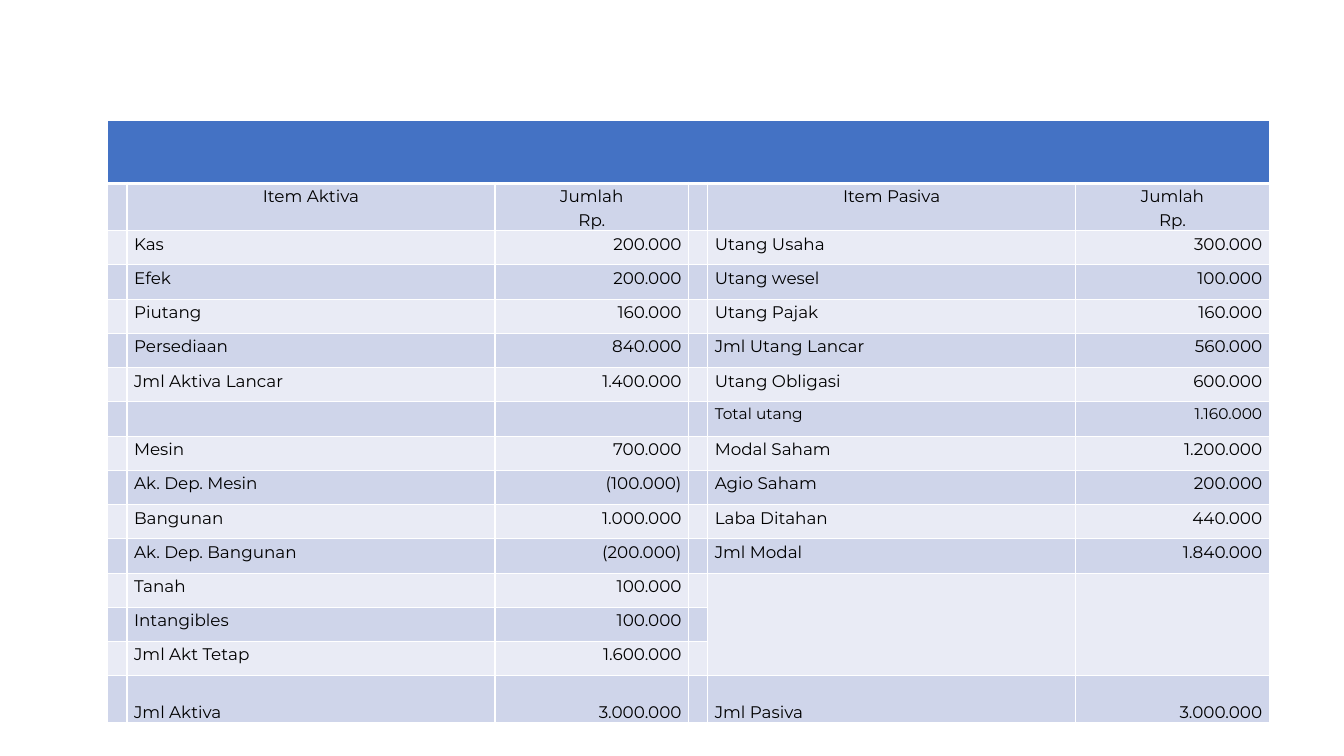
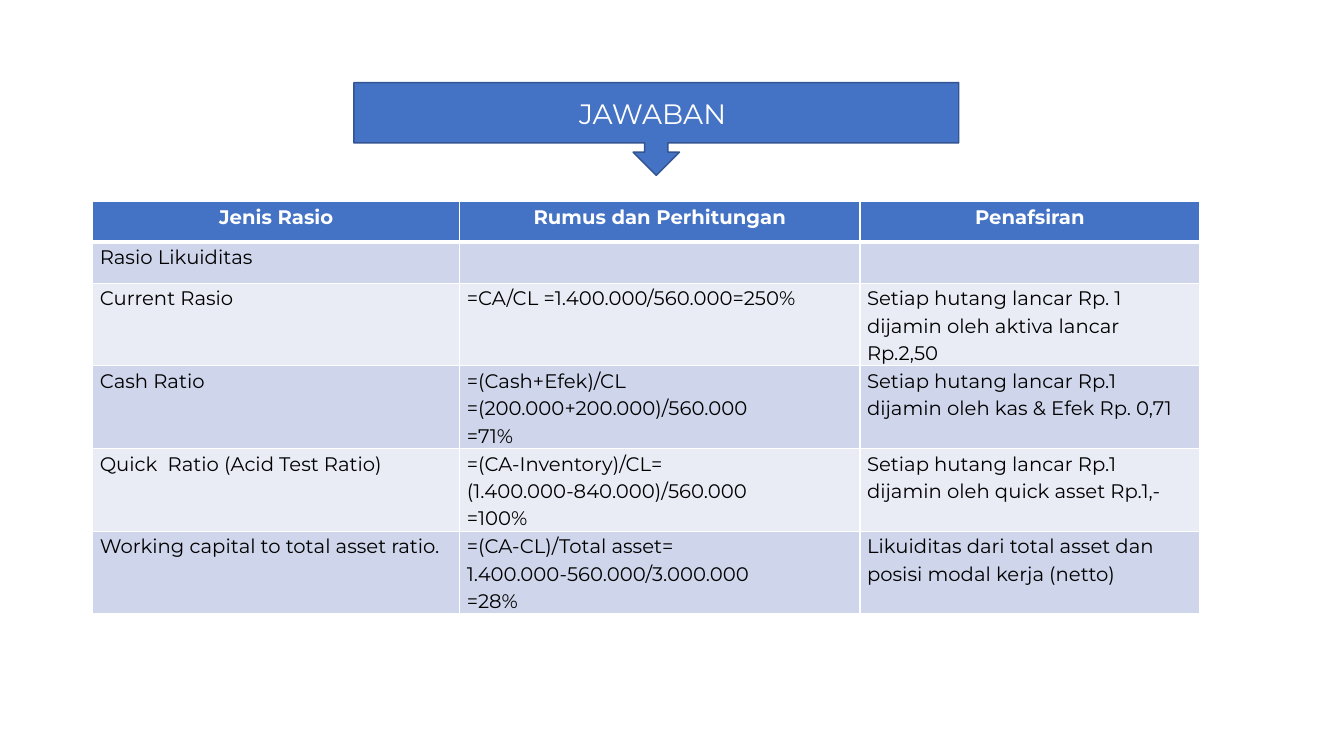
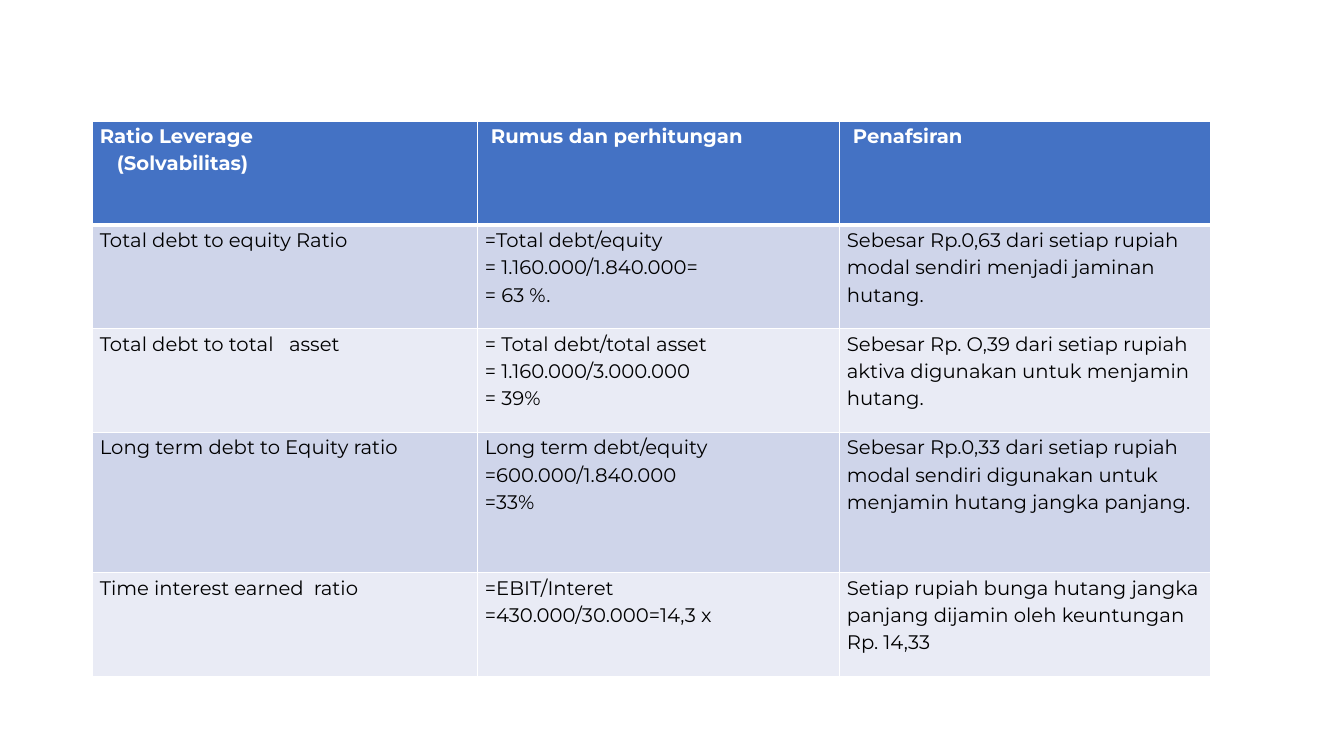
import dataclasses

import pptx
import pptx.dml.color
import pptx.enum.shapes
import pptx.enum.text
import pptx.oxml.ns
import pptx.util
from lxml import etree

Inches = pptx.util.Inches
Pt = pptx.util.Pt
qn = pptx.oxml.ns.qn
Align = pptx.enum.text.PP_ALIGN
Anchor = pptx.enum.text.MSO_ANCHOR

# Shared look
FONT = "Montserrat"
BLUE, EDGE, WHITE, BLACK = "4472C4", "325491", "FFFFFF", "000000"
BANDS = ("E9EBF5", "CFD5EA")
ALIGN = {"l": Align.LEFT, "c": Align.CENTER, "r": Align.RIGHT}
PAD = {
    "margin_left": Inches(0.07),
    "margin_right": Inches(0.07),
    "margin_top": 0,
    "margin_bottom": 0,
}
PLAIN = {"first_row": False, "horz_banding": False}


@dataclasses.dataclass
class Grid:
    """A table: place, sizes, text rows, and what departs from the rule."""

    left: float
    top: float
    cols: list[float]
    rows: list[float]
    text: list[tuple[str, ...]]
    size: float
    heads: dict[int, str]  # alignment of all cells in a row
    sides: str  # alignment of each column, one letter each
    sizes: dict[int, float] = dataclasses.field(default_factory=dict)
    dents: dict[tuple[int, int, int], float] = dataclasses.field(default_factory=dict)
    spans: list[tuple[int, int, int, int]] = dataclasses.field(default_factory=list)
    low: int = -1  # row whose text sits at the bottom


# Helpers
def put(item, form: dict) -> None:
    for key, value in form.items():
        setattr(item, key, value)


def tint(code: str) -> pptx.dml.color.RGBColor:
    return pptx.dml.color.RGBColor.from_string(code)


def paint(item, code: str) -> None:
    item.fill.solid()
    item.fill.fore_color.rgb = tint(code)


def style(run, size: float, code: str, bold: bool = False) -> None:
    put(run.font, {"name": FONT, "size": Pt(size), "bold": bold})
    run.font.color.rgb = tint(code)


def frame(cell, row: int) -> None:
    """White cell borders, with a thick rule under the top row."""
    props = cell._tc.get_or_add_tcPr()
    thick = {0: "lnB", 1: "lnT"}.get(row)
    for tag in ("lnL", "lnR", "lnT", "lnB"):
        width = Pt(3 if tag == thick else 1)
        line = etree.SubElement(props, qn("a:" + tag), w=str(int(width)))
        fill = etree.SubElement(line, qn("a:solidFill"))
        etree.SubElement(fill, qn("a:srgbClr"), val=WHITE)


def write(cell, grid: Grid, row: int, col: int) -> None:
    size = grid.sizes.get(row, grid.size)
    side = grid.heads.get(row, grid.sides)
    for num, line in enumerate(grid.text[row][col].split("\n")):
        body = cell.text_frame
        para = body.add_paragraph() if num else body.paragraphs[0]
        put(para, {"alignment": ALIGN[side[col]], "line_spacing": 1.15})
        dent = grid.dents.get((row, col, num))
        if dent:
            para._p.get_or_add_pPr().set("marL", str(int(Inches(dent))))
        if line:
            run = para.add_run()
            run.text = line
            style(run, size, BLACK if row else WHITE, row == 0)
        else:
            etree.SubElement(para._p, qn("a:endParaRPr"), sz=str(int(size * 100)))


def draw(slide, grid: Grid) -> None:
    table = slide.shapes.add_table(
        len(grid.rows), len(grid.cols), Inches(grid.left), Inches(grid.top),
        Inches(sum(grid.cols)), Inches(sum(grid.rows)),
    ).table
    put(table, PLAIN)
    for part, width in zip(table.columns, grid.cols):
        part.width = Inches(width)
    for part, height in zip(table.rows, grid.rows):
        part.height = Inches(height)
    for row in range(len(grid.rows)):
        for col in range(len(grid.cols)):
            cell = table.cell(row, col)
            put(cell, PAD)
            if row == grid.low:
                cell.vertical_anchor = Anchor.BOTTOM
            frame(cell, row)
            paint(cell, BANDS[row % 2] if row else BLUE)
            write(cell, grid, row, col)
    for top, left, end, right in grid.spans:
        table.cell(top, left).merge(table.cell(end, right))


def banner(slide, text: str) -> None:
    kind = pptx.enum.shapes.MSO_SHAPE.DOWN_ARROW_CALLOUT
    shape = slide.shapes.add_shape(
        kind, Inches(3.51), Inches(0.82), Inches(6), Inches(0.92)
    )
    shape.shadow.inherit = False
    paint(shape, BLUE)
    shape.line.color.rgb = tint(EDGE)
    shape.line.width = Pt(1)
    shape.text_frame.vertical_anchor = Anchor.MIDDLE
    para = shape.text_frame.paragraphs[0]
    para.alignment = Align.CENTER
    run = para.add_run()
    run.text = text
    style(run, 20, WHITE)


# Balance sheet: asset, sum, claim, sum
SHEET = [
    ("", "", "", ""),
    ("Item Aktiva", "Jumlah\nRp.", "Item Pasiva", "Jumlah\nRp."),
    ("Kas", "200.000", "Utang Usaha", "300.000"),
    ("Efek", "200.000", "Utang wesel", "100.000"),
    ("Piutang", "160.000", "Utang Pajak", "160.000"),
    ("Persediaan", "840.000", "Jml Utang Lancar", "560.000"),
    ("Jml Aktiva Lancar", "1.400.000", "Utang Obligasi", "600.000"),
    ("", "", "Total utang", "1.160.000"),
    ("Mesin", "700.000", "Modal Saham", "1.200.000"),
    ("Ak. Dep. Mesin", "(100.000)", "Agio Saham", "200.000"),
    ("Bangunan", "1.000.000", "Laba Ditahan", "440.000"),
    ("Ak. Dep. Bangunan", "(200.000)", "Jml Modal", "1.840.000"),
    ("Tanah", "100.000", "", ""),
    ("Intangibles", "100.000", "", ""),
    ("Jml Akt Tetap", "1.600.000", "", ""),
    ("Jml Aktiva", "3.000.000", "Jml Pasiva", "3.000.000"),
]
BALANCE = Grid(
    left=1.07, top=1.19,
    cols=[0.19, 3.65, 1.92] * 2,
    rows=[0.63, 0.46] + [0.34] * 13 + [0.46],
    text=[("", *line[:2], "", *line[2:]) for line in SHEET],
    size=12, heads={1: "cccccc"}, sides="llrllr", sizes={7: 11},
    spans=[(0, 0, 0, 5), (12, 4, 14, 4), (12, 5, 14, 5)],
    low=15,
)

# Liquidity ratios
LIQUID = Grid(
    left=0.92, top=2,
    cols=[3.64, 3.97, 3.37],
    rows=[0.4, 0.41] + [0.82] * 4,
    text=[
        ("Jenis Rasio", "Rumus dan Perhitungan", "Penafsiran"),
        ("Rasio Likuiditas", "", ""),
        ("Current Rasio", "=CA/CL =1.400.000/560.000=250%",
         "Setiap hutang lancar Rp. 1 dijamin oleh aktiva lancar Rp.2,50"),
        ("Cash Ratio", "=(Cash+Efek)/CL\n=(200.000+200.000)/560.000\n=71%",
         "Setiap hutang lancar Rp.1 dijamin oleh kas & Efek Rp. 0,71"),
        ("Quick  Ratio (Acid Test Ratio)",
         "=(CA-Inventory)/CL=\n(1.400.000-840.000)/560.000\n=100%",
         "Setiap hutang lancar Rp.1 dijamin oleh quick asset Rp.1,-"),
        ("Working capital to total asset ratio.",
         "=(CA-CL)/Total asset=\n1.400.000-560.000/3.000.000\n=28%",
         "Likuiditas dari total asset dan posisi modal kerja (netto)"),
    ],
    size=14, heads={0: "ccc"}, sides="lll",
)

# Leverage ratios
DEBT = Grid(
    left=0.92, top=1.2,
    cols=[3.82, 3.59, 3.68],
    rows=[1.03, 1.03, 1.03, 1.39, 1.03],
    text=[
        ("Ratio Leverage\n(Solvabilitas)", "Rumus dan perhitungan", "Penafsiran"),
        ("Total debt to equity Ratio",
         "=Total debt/equity\n= 1.160.000/1.840.000=\n= 63 %.",
         "Sebesar Rp.0,63 dari setiap rupiah modal sendiri menjadi jaminan hutang."),
        ("Total debt to total   asset",
         "= Total debt/total asset\n= 1.160.000/3.000.000\n= 39%",
         "Sebesar Rp. O,39 dari setiap rupiah aktiva digunakan untuk menjamin hutang."),
        ("Long term debt to Equity ratio",
         "Long term debt/equity\n=600.000/1.840.000\n=33%",
         "Sebesar Rp.0,33 dari setiap rupiah modal sendiri digunakan untuk "
         "menjamin hutang jangka panjang."),
        ("Time interest earned  ratio",
         "=EBIT/Interet\n=430.000/30.000=14,3 x",
         "Setiap rupiah bunga hutang jangka panjang dijamin oleh keuntungan Rp. 14,33"),
    ],
    size=14, heads={}, sides="lll",
    dents={(0, 0, 1): 0.17, (0, 1, 0): 0.06, (0, 2, 0): 0.06},
)


def main() -> None:
    deck = pptx.Presentation()
    put(deck, {"slide_width": Inches(13.33), "slide_height": Inches(7.5)})
    for grid, title in ((BALANCE, ""), (LIQUID, "JAWABAN "), (DEBT, "")):
        slide = deck.slides.add_slide(deck.slide_layouts[6])
        draw(slide, grid)
        if title:
            banner(slide, title)
    deck.save("out.pptx")


if __name__ == "__main__":
    main()
